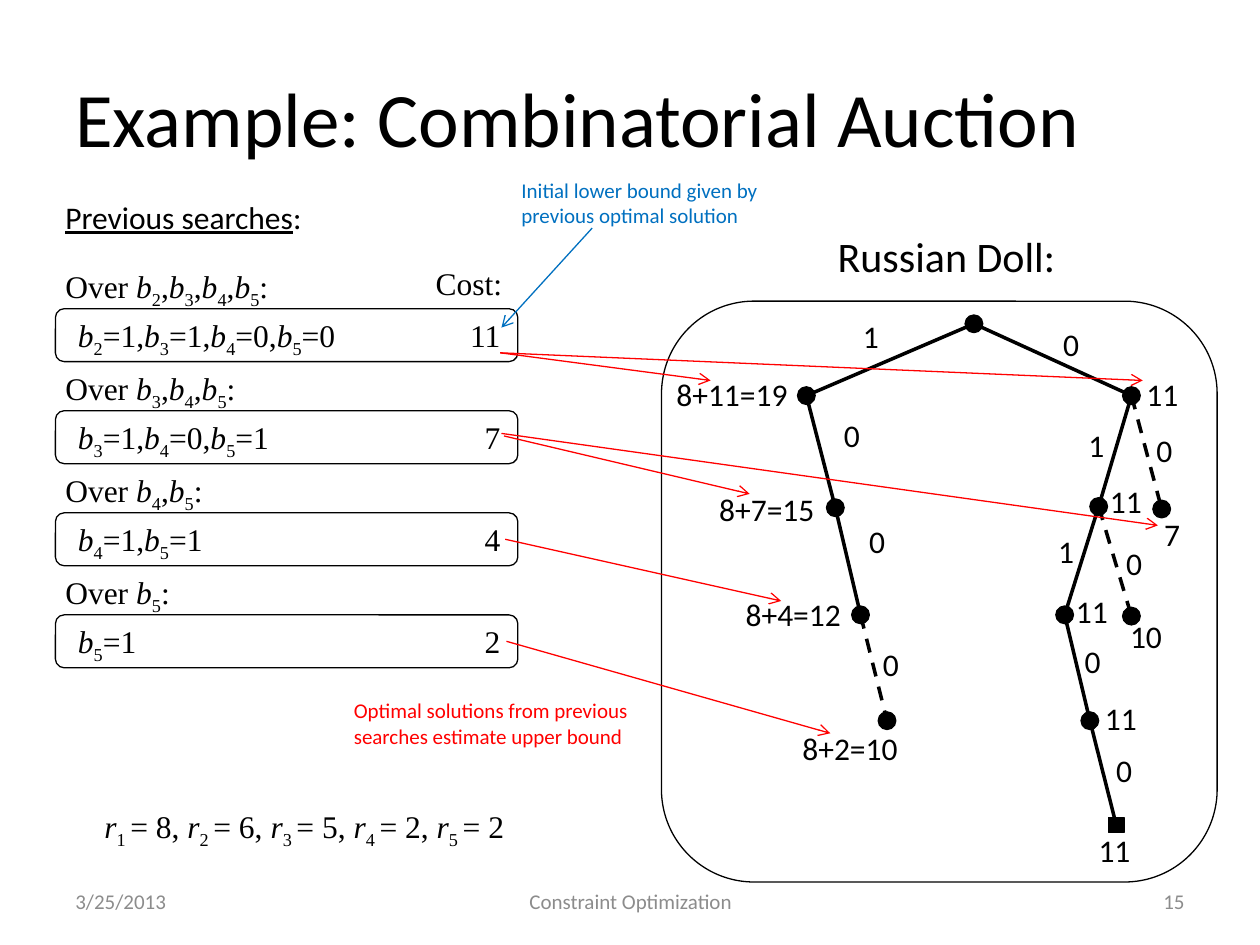
from lxml import etree
from pptx import Presentation
from pptx.dml.color import RGBColor
from pptx.enum.dml import MSO_LINE
from pptx.enum.shapes import MSO_CONNECTOR, MSO_SHAPE
from pptx.enum.text import MSO_ANCHOR, MSO_AUTO_SIZE, PP_ALIGN
from pptx.oxml.ns import qn
from pptx.util import Pt

PX = 9144  # 100 px to the inch
LEFT, MID, RIGHT = PP_ALIGN.LEFT, PP_ALIGN.CENTER, PP_ALIGN.RIGHT
TOP, CENTRE = MSO_ANCHOR.TOP, MSO_ANCHOR.MIDDLE
GROW, FIXED = MSO_AUTO_SIZE.SHAPE_TO_FIT_TEXT, MSO_AUTO_SIZE.NONE
OVAL, RECT, ROUND = MSO_SHAPE.OVAL, MSO_SHAPE.RECTANGLE, MSO_SHAPE.ROUNDED_RECTANGLE
STRAIGHT, DASH = MSO_CONNECTOR.STRAIGHT, MSO_LINE.DASH
BLACK, GREY, RED, BLUE = "000000", "8C8C8C", "FF0000", "0070C0"
SANS, SERIF = "Calibri", "Times New Roman"

# Tree parts, relative to the panel
NODES = {
    "root": (248, 18),
    "l1": (115, 75), "l2": (138, 164), "l3": (158, 249), "l4": (179, 333),
    "r1": (373, 75), "r2": (347, 163), "r3": (320, 249), "r4": (340, 333),
    "d1": (397, 165), "d2": (373, 250), "leaf": (361, 416),
}
# from, to, value, label left and top, dashed
EDGES = [
    ("root", "l1", "1", 150, 8, False), ("l1", "l2", "0", 135, 86, False),
    ("l2", "l3", "0", 155, 170, False), ("l3", "l4", "0", 166, 268, True),
    ("root", "r1", "0", 309, 14, False), ("r1", "r2", "1", 329, 94, False),
    ("r2", "r3", "1", 305, 178, False), ("r3", "r4", "0", 326, 266, False),
    ("r4", "leaf", "0", 351, 352, False), ("r1", "d1", "0", 383, 98, True),
    ("r2", "d2", "0", 359, 188, True),
]
# value, left, top, width
BOUNDS = [
    ("8+11=19", 2, 54, 113), ("8+7=15", 36, 145, 101),
    ("8+4=12", 57, 228, 103), ("8+2=10", 102, 335, 104),
    ("11", 375, 54, 49), ("11", 346, 139, 49), ("11", 319, 226, 49),
    ("11", 342, 311, 49), ("11", 337, 416, 49), ("7", 389, 165, 33),
    ("10", 362, 246, 49),
]
# first variable, its values, cost
SEARCHES = [(2, "1100", "11"), (3, "101", "7"), (4, "11", "4"), (5, "1", "2")]
ARROWS = [
    (397, 280, 564, 302), (397, 280, 907, 302), (400, 346, 595, 392),
    (398, 344, 919, 417), (401, 428, 620, 477), (402, 509, 659, 582),
]


def tint(code):
    return RGBColor.from_string(code)


def emu(*nums):
    return [n * PX for n in nums]


def write(par, text, **look):
    """Split text at bars: / starts an italic run, _ a subscript, ~ an underlined one."""
    for part in filter(None, text.split("|")):
        mark = part[0] if part[0] in "/_~" else ""
        run = par.add_run()
        run.text = part[len(mark):]
        style = {"italic": mark == "/", "underline": mark == "~", **look}
        for key, val in style.items():
            setattr(run.font, key, val)
        if mark == "_":
            run._r.get_or_add_rPr().set("baseline", "-25000")


def label(slide, text, x, y, w, h=40, size=18, face=SANS, ink=BLACK,
          align=LEFT, anchor=TOP):
    frame = slide.shapes.add_textbox(*emu(x, y, w, h)).text_frame
    form = {"word_wrap": True, "vertical_anchor": anchor,
            "auto_size": GROW if anchor == TOP else FIXED}
    for key, val in form.items():
        setattr(frame, key, val)
    par = frame.paragraphs[0]
    par.alignment = align
    write(par, text, size=Pt(size), name=face)
    for run in par.runs:
        run.font.color.rgb = tint(ink)


def shape(slide, kind, x, y, w, h, fill=None):
    item = slide.shapes.add_shape(kind, *emu(x, y, w, h))
    item.shadow.inherit = False
    if fill:
        item.fill.solid()
        item.fill.fore_color.rgb = tint(fill)
    else:
        item.fill.background()
    item.line.color.rgb = tint(BLACK)
    item.line.width = Pt(0.75)


def link(slide, ends, ink=BLACK, width=0.75, dash=False, arrow=False):
    item = slide.shapes.add_connector(STRAIGHT, *emu(*ends))
    item.line.color.rgb = tint(ink)
    item.line.width = Pt(width)
    if dash:
        item.line.dash_style = DASH
    if arrow:
        etree.SubElement(item.line._get_or_add_ln(), qn("a:tailEnd"), type="arrow")
    etree.SubElement(item._element.spPr, qn("a:effectLst"))


def tree(slide, x, y, w, h):
    label(slide, "Russian Doll:", x + 130, y - 61, 220, 50, size=24)
    shape(slide, ROUND, x, y, w, h)
    spots = {name: (x + dx, y + dy) for name, (dx, dy) in NODES.items()}
    for start, end, text, dx, dy, dash in EDGES:
        link(slide, spots[start] + spots[end], width=2, dash=dash)
        label(slide, text, x + dx, y + dy, 33)
    for name, (cx, cy) in spots.items():
        kind, d = (RECT, 12) if name == "leaf" else (OVAL, 14)
        shape(slide, kind, cx - d // 2, cy - d // 2, d, d, BLACK)
    for text, dx, dy, wide in BOUNDS:
        label(slide, text, x + dx, y + dy, wide)


def search(slide, x, y, w, first, vals, cost):
    """One past search: its variables above a frame with values and cost."""
    names = [f"|/b|_{first + i}|" for i in range(len(vals))]
    over = "Over " + ",".join(names) + ":"
    found = ",".join(f"{name}={val}" for name, val in zip(names, vals))
    label(slide, over, x - 2, y, 318, face=SERIF)
    shape(slide, ROUND, x, y + 38, w, 42)
    label(slide, found, x + 8, y + 39, 262, face=SERIF)
    label(slide, cost, x + w - 53, y + 39, 49, face=SERIF, align=RIGHT)


def past(slide, x, y, w, step):
    label(slide, "~Previous searches|:", x - 2, y, 409)
    label(slide, "Cost:", x + 292, y + 53, 83, face=SERIF)
    for row, item in enumerate(SEARCHES):
        search(slide, x, y + 55 + row * step, w, *item)
    gains = ", ".join(f"|/r|_{i} |= {val}"
                      for i, val in enumerate([8, 6, 5, 2, 2], 1))
    label(slide, gains, x + 29, y + 484, 382, face=SERIF)


def notes(slide):
    """Coloured remarks and the arrows from searches to tree."""
    label(slide, "Initial lower bound given by previous optimal solution",
          404, 136, 215, 50, size=12, ink=BLUE)
    link(slide, (470, 181, 398, 260), BLUE, arrow=True)
    label(slide, "Optimal solutions from previous searches estimate upper bound",
          271, 549, 242, 50, size=12, ink=RED)
    for ends in ARROWS:
        link(slide, ends, RED, arrow=True)


def foot(slide, y, h):
    for text, x, w, align in [("3/25/2013", 50, 233, LEFT),
                              ("Constraint Optimization", 342, 317, MID),
                              ("15", 717, 233, RIGHT)]:
        label(slide, text, x, y, w, h, size=12, ink=GREY, align=align,
              anchor=CENTRE)


def main():
    deck = Presentation()
    deck.slide_width, deck.slide_height = emu(1000, 750)
    slide = deck.slides.add_slide(deck.slide_layouts[6])
    label(slide, "Example: Combinatorial Auction", 50, 30, 900, 125, size=44,
          anchor=CENTRE)
    foot(slide, 695, 40)
    tree(slide, 525, 239, 441, 461)
    past(slide, 44, 152, 367, 81)
    notes(slide)
    deck.save("out.pptx")


if __name__ == "__main__":
    main()
